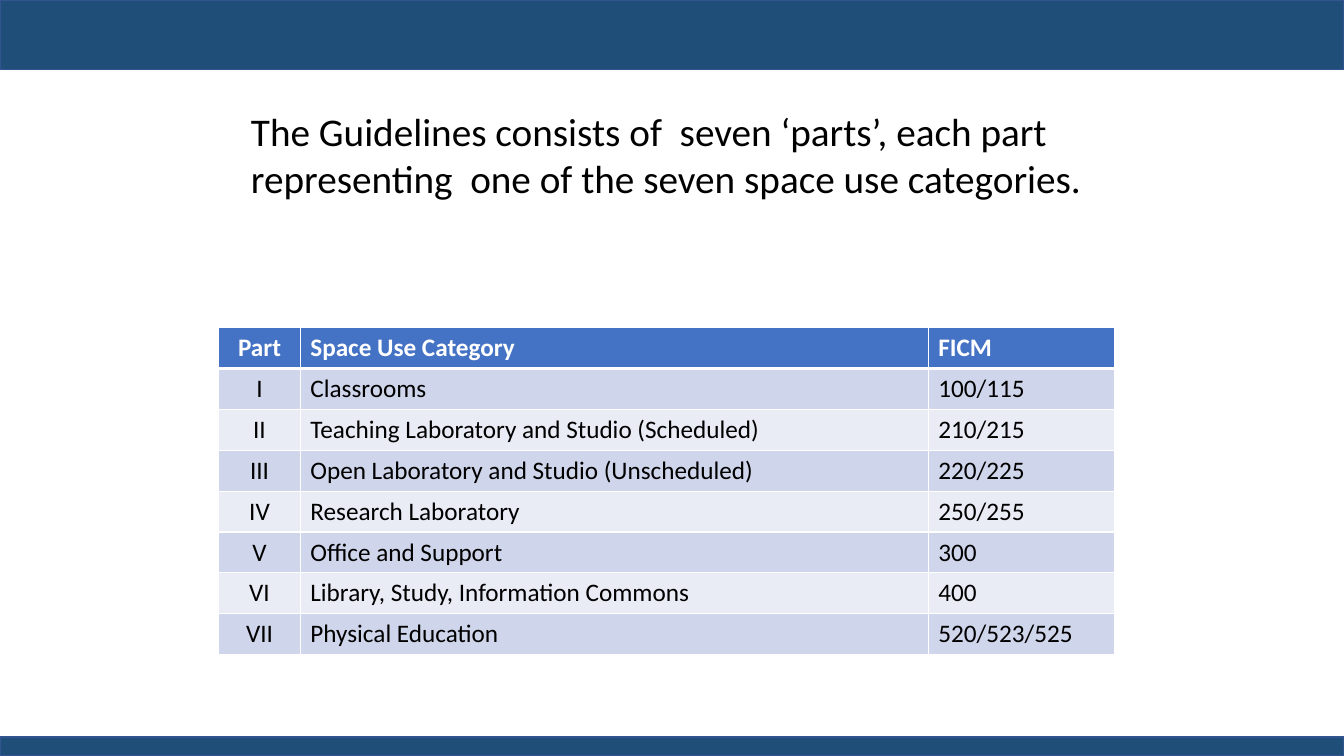
from dataclasses import dataclass

from lxml import etree
from pptx import Presentation
from pptx.dml.color import RGBColor
from pptx.enum.shapes import MSO_SHAPE
from pptx.enum.text import MSO_ANCHOR, MSO_AUTO_SIZE, PP_ALIGN
from pptx.oxml.ns import qn
from pptx.slide import Slide
from pptx.table import _Cell
from pptx.text.text import TextFrame
from pptx.util import Inches, Pt

RECT = MSO_SHAPE.RECTANGLE
TOP = MSO_ANCHOR.TOP
FIXED = MSO_AUTO_SIZE.NONE
LEFT, MID = PP_ALIGN.LEFT, PP_ALIGN.CENTER

NAVY = RGBColor(0x1F, 0x4E, 0x79)
EDGE = RGBColor(0x32, 0x54, 0x91)
BLUE = RGBColor(0x44, 0x72, 0xC4)
DARK = RGBColor(0xCF, 0xD5, 0xEA)
PALE = RGBColor(0xE9, 0xEB, 0xF5)
BLACK = RGBColor(0, 0, 0)
WHITE = RGBColor(0xFF, 0xFF, 0xFF)
FONT = "Calibri"

# Grid of 160 columns by 90 rows
WIDE, HIGH = Inches(13.33), Inches(7.5)
COLS, ROWS = 160, 90


@dataclass(frozen=True)
class Box:
    """A place on the grid, in columns and rows."""
    col: float
    row: float
    width: float
    height: float

    def place(self) -> tuple[int, int, int, int]:
        return (across(self.col), down(self.row),
                across(self.width), down(self.height))


@dataclass(frozen=True)
class Part:
    """One row of the table."""
    name: str
    use: str
    code: str


def across(cols: float) -> int:
    return round(WIDE * cols / COLS)


def down(rows: float) -> int:
    return round(HIGH * rows / ROWS)


BARS = [Box(0, 0, COLS, 8.28), Box(0, 87.72, COLS, 2.28)]
TITLE = Box(28.68, 12.12, 102.72, 12.48)
WIDTHS = [9.72, 74.76, 22.2]
LINE = 4.86
PARTS = [
    Part("Part", "Space Use Category", "FICM"),
    Part("I", "Classrooms", "100/115"),
    Part("II", "Teaching Laboratory and Studio (Scheduled)", "210/215"),
    Part("III", "Open Laboratory and Studio (Unscheduled)", "220/225"),
    Part("IV", "Research Laboratory", "250/255"),
    Part("V", "Office and Support", "300"),
    Part("VI", "Library, Study, Information Commons", "400"),
    Part("VII", "Physical Education", "520/523/525"),
]
TABLE = Box(26.04, 39, sum(WIDTHS), LINE * len(PARTS))


def write(frame: TextFrame, text: str, *, size: float = 18,
          color: RGBColor = BLACK, bold: bool = False,
          align: PP_ALIGN = LEFT) -> None:
    frame.text = text
    for para in frame.paragraphs:
        para.alignment = align
        for run in para.runs:
            font = run.font
            font.name, font.size, font.bold = FONT, Pt(size), bold
            font.color.rgb = color


def add_bar(slide: Slide, box: Box) -> None:
    bar = slide.shapes.add_shape(RECT, *box.place())
    bar.shadow.inherit = False
    bar.fill.solid()
    bar.fill.fore_color.rgb = NAVY
    bar.line.color.rgb = EDGE
    bar.line.width = Pt(1)


def add_title(slide: Slide) -> None:
    title = slide.shapes.title
    title.left, title.top, title.width, title.height = TITLE.place()
    frame = title.text_frame
    write(frame, "The Guidelines consists of  seven ‘parts’, each part\n"
                 "representing  one of the seven space use categories.", size=28)
    frame.word_wrap = False
    frame.auto_size = FIXED
    frame.vertical_anchor = TOP


def rule(cell: _Cell, **sides: float) -> None:
    """Draw white cell borders, with widths in points."""
    props = cell._tc.get_or_add_tcPr()
    for side, width in sides.items():
        line = etree.SubElement(props, qn(f"a:ln{side}"), w=str(Pt(width)))
        fill = etree.SubElement(line, qn("a:solidFill"))
        etree.SubElement(fill, qn("a:srgbClr"), val=str(WHITE))


def add_table(slide: Slide) -> None:
    table = slide.shapes.add_table(
        len(PARTS), len(WIDTHS), *TABLE.place()).table
    for col, width in zip(table.columns, WIDTHS):
        col.width = across(width)
    for i, part in enumerate(PARTS):
        table.rows[i].height = down(LINE)
        head = i == 0
        shade = BLUE if head else DARK if i % 2 else PALE
        for j, text in enumerate((part.name, part.use, part.code)):
            cell = table.cell(i, j)
            rule(cell, L=1, R=1, T=3 if i == 1 else 1, B=3 if head else 1)
            cell.fill.solid()
            cell.fill.fore_color.rgb = shade
            write(cell.text_frame, text, bold=head,
                  color=WHITE if head else BLACK,
                  align=LEFT if j else MID)


def main() -> None:
    deck = Presentation()
    deck.slide_width, deck.slide_height = WIDE, HIGH
    slide = deck.slides.add_slide(deck.slide_layouts.get_by_name("Title Only"))
    # Bands at top and bottom
    for box in BARS:
        add_bar(slide, box)
    # Heading and table of parts
    add_title(slide)
    add_table(slide)
    deck.save("out.pptx")


if __name__ == "__main__":
    main()
